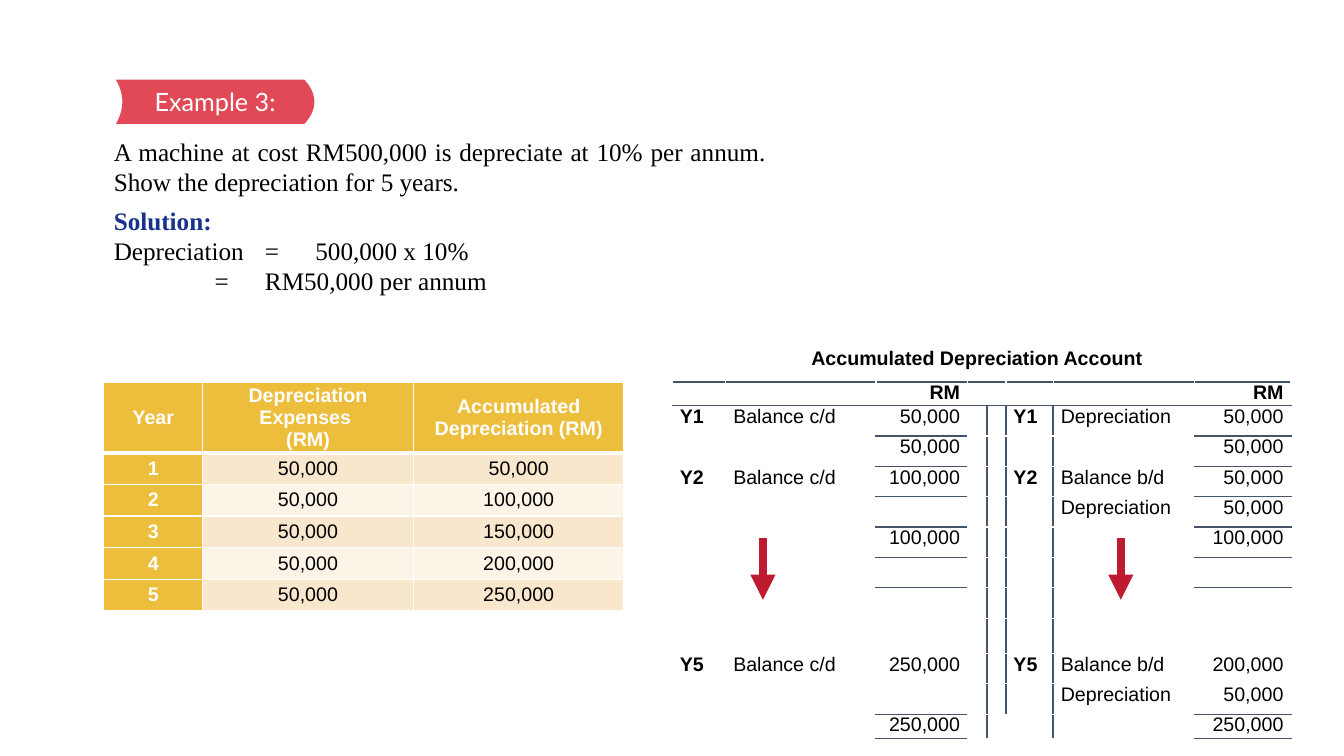
from dataclasses import dataclass
from typing import Any, Callable

from lxml import etree
from pptx import Presentation
from pptx import util as u
from pptx.dml.color import RGBColor
from pptx.enum import shapes, text
from pptx.oxml.ns import qn

Pt = u.Pt
LEFT, MID, RIGHT, JUST = (text.PP_ALIGN.LEFT, text.PP_ALIGN.CENTER,
                          text.PP_ALIGN.RIGHT, text.PP_ALIGN.JUSTIFY)


@dataclass(frozen=True)
class Theme:
    white: str = "FFFFFF"
    black: str = "000000"
    navy: str = "16328C"
    coral: str = "E24956"
    gold: str = "EDBD3C"
    sand: str = "F8E7CD"
    cream: str = "FCF4E7"
    slate: str = "445469"
    red: str = "BE1A30"
    sans: str = "Arial"
    serif: str = "Times New Roman"
    head: str = "Lato"
    big: float = 18
    small: float = 14


@dataclass(frozen=True)
class Box:
    x: float
    y: float
    w: float
    h: float

    def emu(self) -> tuple:
        return Pt(self.x), Pt(self.y), Pt(self.w), Pt(self.h)


@dataclass(frozen=True)
class Line:
    words: str
    font: str
    size: float
    color: str
    bold: bool = False
    align: Any = LEFT
    before: float = 0


@dataclass(frozen=True)
class Edge:
    width: float
    color: str


T = Theme()


def put(item: Any, values: dict) -> None:
    for name, value in values.items():
        setattr(item, name, value)


def write(frame: Any, lines: list[Line]) -> None:
    for i, line in enumerate(lines):
        para = frame.add_paragraph() if i else frame.paragraphs[0]
        put(para, {"alignment": line.align, "space_before": Pt(line.before)})
        if line.words:
            run = para.add_run()
            put(run, {"text": line.words})
            put(run.font, {"name": line.font, "size": Pt(line.size), "bold": line.bold})
            run.font.color.rgb = RGBColor.from_string(line.color)
        else:
            etree.SubElement(para._p, qn("a:endParaRPr"), sz=str(int(line.size * 100)))


def paint(shape: Any, color: str) -> None:
    shape.shadow.inherit = False
    shape.fill.solid()
    shape.fill.fore_color.rgb = RGBColor.from_string(color)
    shape.line.fill.background()


def style(cell: Any, lines: list[Line], fill: str, edges: dict[str, Edge | None],
          anchor: Any) -> None:
    put(cell, {"margin_left": Pt(5.4), "margin_right": Pt(5.4), "margin_top": 0,
               "margin_bottom": 0, "vertical_anchor": anchor})
    write(cell.text_frame, lines)
    props = cell._tc.get_or_add_tcPr()
    for side in "LRTB":
        edge = edges.get(side)
        if edge:
            ln = etree.SubElement(props, qn(f"a:ln{side}"), w=str(Pt(edge.width)))
            solid = etree.SubElement(ln, qn("a:solidFill"))
            etree.SubElement(solid, qn("a:srgbClr"), val=edge.color)
    cell.fill.solid()
    cell.fill.fore_color.rgb = RGBColor.from_string(fill)


def grid(slide: Any, x: float, y: float, cols: list[float], rows: list[float],
         draw: Callable[[Any, int, int], None]) -> Any:
    box = Box(x, y, sum(cols), sum(rows))
    table = slide.shapes.add_table(len(rows), len(cols), *box.emu()).table
    put(table, {"first_row": False, "horz_banding": False})
    for col, width in zip(table.columns, cols):
        col.width = Pt(width)
    for row, height in zip(table.rows, rows):
        row.height = Pt(height)
    for r in range(len(rows)):
        for c in range(len(cols)):
            draw(table.cell(r, c), r, c)
    return table


def banner(slide: Any, box: Box) -> None:
    steps = [i / 12 for i in range(-12, 13)]
    half = box.h / 2

    def bow(x: float, depth: float) -> list[tuple]:
        return [(Pt(x + depth * (1 - t * t)), Pt(box.y + half + half * t)) for t in steps]

    rim = bow(box.x + box.w - 7.2, 7.2) + bow(box.x, 4.6)[::-1]
    pen = slide.shapes.build_freeform(*rim[0])
    pen.add_line_segments(rim[1:])
    ribbon = pen.convert_to_shape()
    paint(ribbon, T.coral)
    title = slide.shapes.title
    put(title, dict(zip(("left", "top", "width", "height"), box.emu())))
    put(title.text_frame, {"vertical_anchor": text.MSO_ANCHOR.MIDDLE, "word_wrap": True,
                           "auto_size": text.MSO_AUTO_SIZE.NONE})
    write(title.text_frame, [Line("Example 3:", T.head, T.big, T.white, align=MID)])
    title.element.addprevious(ribbon.element)


def problem(slide: Any) -> None:
    frame = slide.shapes.add_textbox(*Box(74.2, 93.6, 480.2, 122.4).emu()).text_frame
    frame.word_wrap = True
    body = {"font": T.serif, "size": T.big, "align": JUST}
    write(frame, [
        Line("A machine at cost RM500,000 is depreciate at 10% per annum. "
             "Show the depreciation for 5 years.", color=T.black, **body),
        Line("Solution:", color=T.navy, bold=True, before=6, **body),
        Line("Depreciation\t=\t500,000 x 10%", color=T.black, **body),
        Line("\t\t=\tRM50,000 per annum", color=T.black, **body)])


def schedule(slide: Any) -> None:
    heads = [["Year"], ["Depreciation Expenses ", "(RM)"], ["Accumulated Depreciation (RM)"]]
    cost = 50000
    thin, thick = Edge(1, T.white), Edge(3, T.white)

    def draw(cell: Any, r: int, c: int) -> None:
        words = heads[c] if r == 0 else [[str(r), f"{cost:,}", f"{cost * r:,}"][c]]
        lead = r == 0 or c == 0
        fill = T.gold if lead else T.sand if r % 2 else T.cream
        ink = T.white if lead else T.black
        style(cell, [Line(w, T.sans, T.small, ink, lead, MID) for w in words], fill,
              {"L": thin, "R": thin, "T": thick if r == 1 else thin,
               "B": thick if r == 0 else thin}, text.MSO_ANCHOR.MIDDLE)

    grid(slide, 74.2, 272.9, [70.6, 150.5, 150.5], [50] + [22.6] * 5, draw)


def ledger(slide: Any) -> None:
    # Each row: year, debit entry, amount, year, credit entry, amount
    rows = [
        ("", "", "RM", "", "", "RM"),
        ("Y1", "Balance c/d", "50,000", "Y1", "Depreciation", "50,000"),
        ("", "", "50,000", "", "", "50,000"),
        ("Y2", "Balance c/d", "100,000", "Y2", "Balance b/d", "50,000"),
        ("", "", "", "", "Depreciation", "50,000"),
        ("", "", "100,000", "", "", "100,000"),
        *[("",) * 6] * 3,
        ("Y5", "Balance c/d", "250,000", "Y5", "Balance b/d", "200,000"),
        ("", "", "", "", "Depreciation", "50,000"),
        ("", "", "250,000", "", "", "250,000")]
    thin, thick = Edge(1, T.slate), Edge(1.5, T.slate)

    def under(r: int, c: int) -> Edge | None:
        if r < 0:
            return thick
        ruled = r == 0 or (c in (2, 7) and r in (1, 2, 3, 4, 5, 6, 10, 11))
        return (thick if r == 5 else thin) if ruled else None

    def beside(r: int, c: int) -> Edge | None:
        return thick if (c == 3 and r > 0) or (c == 4 and 0 < r < 11) else None

    def draw(cell: Any, r: int, c: int) -> None:
        words = (rows[r][:3] + ("", "") + rows[r][3:])[c]
        line = Line(words, T.sans, T.small, T.black, r == 0 or c in (0, 5),
                    RIGHT if c in (2, 7) else JUST)
        style(cell, [line], T.white,
              {"L": beside(r, c - 1), "R": beside(r, c),
               "T": under(r - 1, c), "B": under(r, c)}, text.MSO_ANCHOR.TOP)

    table = grid(slide, 480.2, 272.9, [38.2, 107.3, 65.5, 13.7, 13.7, 33.8, 100.8, 69.1],
                 [16.6] + [21.7] * 7 + [25.2] + [21.7] * 2 + [17.6], draw)
    for start, end in [((0, 3), (0, 4)), ((6, 5), (7, 5)), ((11, 4), (11, 5))]:
        table.cell(*start).merge(table.cell(*end))


def caption(slide: Any) -> None:
    box = Box(572.4, 243.4, 258.5, 24.5)
    plate = slide.shapes.add_shape(shapes.MSO_SHAPE.RECTANGLE, *box.emu())
    paint(plate, T.white)
    put(plate.text_frame, {"word_wrap": True, "vertical_anchor": text.MSO_ANCHOR.MIDDLE})
    write(plate.text_frame, [Line("Accumulated Depreciation Account", T.sans, T.small,
                                  T.black, True)])


def arrow(slide: Any, x: float) -> None:
    line = slide.shapes.add_connector(shapes.MSO_CONNECTOR.STRAIGHT,
                                      Pt(x), Pt(384.5), Pt(x), Pt(428.4))
    line.line.width = Pt(6)
    line.line.color.rgb = RGBColor.from_string(T.red)
    props = line.element.spPr
    etree.SubElement(props.find(qn("a:ln")), qn("a:tailEnd"), type="triangle")
    etree.SubElement(props, qn("a:effectLst"))


def main() -> None:
    deck = Presentation()
    put(deck, {"slide_width": Pt(960), "slide_height": Pt(540)})
    slide = deck.slides.add_slide(deck.slide_layouts[5])
    # Question
    banner(slide, Box(82.8, 56.9, 141.8, 31.7))
    problem(slide)
    # Tables
    schedule(slide)
    caption(slide)
    ledger(slide)
    # Skipped years
    for x in (545, 800.6):
        arrow(slide, x)
    deck.save("out.pptx")


if __name__ == "__main__":
    main()
